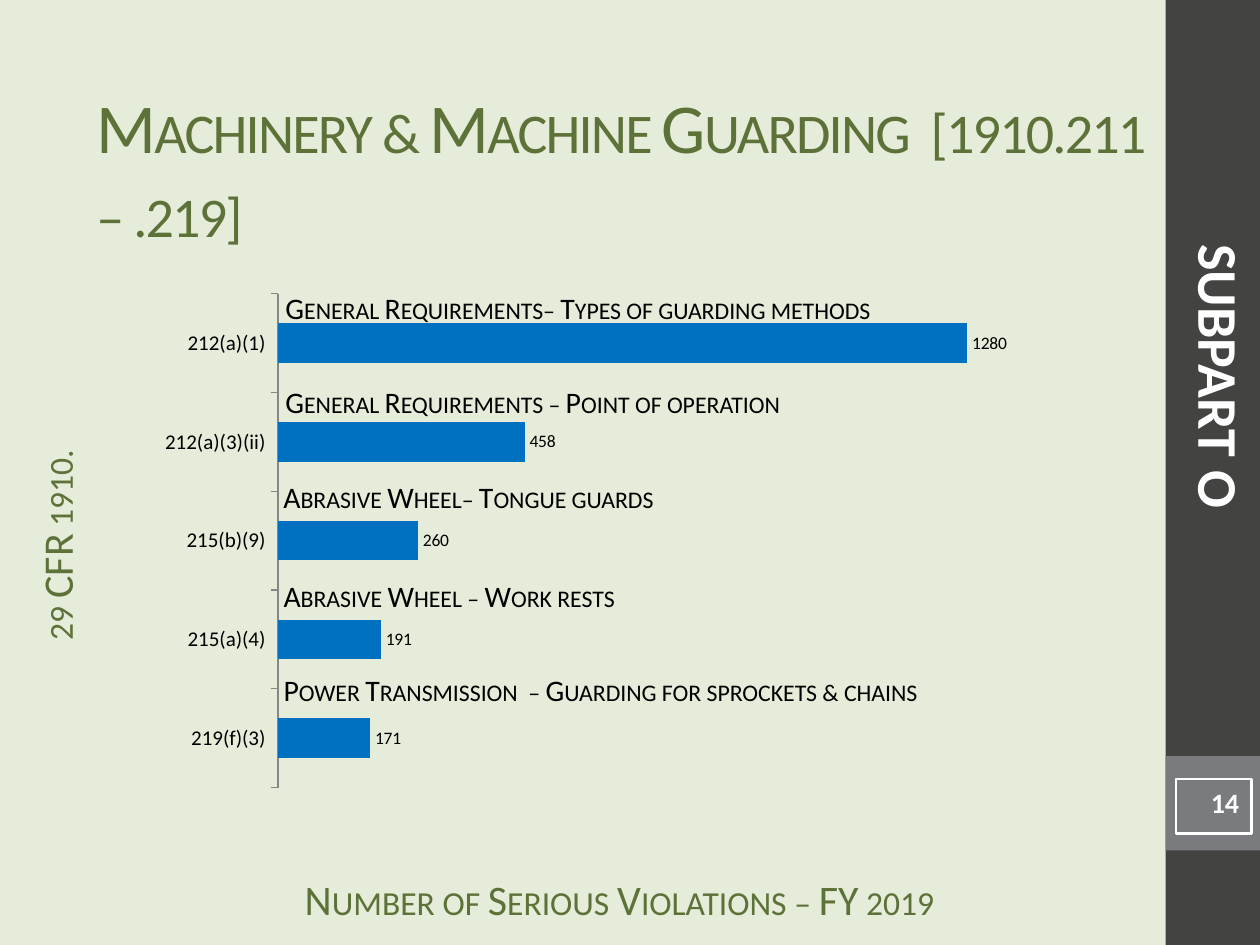
from pptx import Presentation
from pptx.chart.data import CategoryChartData
from pptx.dml.color import RGBColor
from pptx.enum.chart import XL_CHART_TYPE, XL_LABEL_POSITION, XL_TICK_MARK
from pptx.enum.shapes import MSO_SHAPE
from pptx.enum.text import MSO_ANCHOR, MSO_AUTO_SIZE, PP_ALIGN
from pptx.util import Inches, Pt

BAR = XL_CHART_TYPE.BAR_CLUSTERED
OUTSIDE_END = XL_LABEL_POSITION.OUTSIDE_END
TICK_OUT, TICK_NONE = XL_TICK_MARK.OUTSIDE, XL_TICK_MARK.NONE
RECT = MSO_SHAPE.RECTANGLE
TOP, MIDDLE = MSO_ANCHOR.TOP, MSO_ANCHOR.MIDDLE
GROW = MSO_AUTO_SIZE.SHAPE_TO_FIT_TEXT
LEFT, CENTER, RIGHT = PP_ALIGN.LEFT, PP_ALIGN.CENTER, PP_ALIGN.RIGHT

THEME = {
    "font": "Calibri",
    "background": "E5ECD9", "band": "434342", "number_band": "797B7E",
    "heading": "5D7238", "text": "000000", "light": "FFFFFF",
    "bar": "0070C0", "axis": "868686",
    "title_size": 40, "side_size": 32, "label_size": 24, "caption_size": 17,
    "number_size": 16, "category_size": 12, "value_size": 10,
}

prs = Presentation()
prs.slide_width, prs.slide_height = Inches(10), Inches(7.5)
COL, ROW = prs.slide_width / 120, prs.slide_height / 90
s = prs.slides.add_slide(prs.slide_layouts[6])


def color(name):
    return RGBColor.from_string(THEME[name])


def grid(left, top, width, height):
    return round(left * COL), round(top * ROW), round(width * COL), round(height * ROW)


def write(sp, text, size, ink, align=LEFT, caps=False, bold=False, spacing=None, **frame):
    """Fill a shape with one styled line; frame holds text frame settings."""
    tf = sp.text_frame
    for name, value in {"word_wrap": True, "vertical_anchor": TOP, **frame}.items():
        setattr(tf, name, value)
    p = tf.paragraphs[0]
    p.alignment = align
    r = p.add_run()
    r.text = text
    for name, value in {"name": THEME["font"], "size": Pt(THEME[size]), "bold": bold}.items():
        setattr(r.font, name, value)
    r.font.color.rgb = color(ink)
    if caps:
        r._r.get_or_add_rPr().set("cap", "small")
    if spacing is not None:
        r._r.get_or_add_rPr().set("spc", str(spacing))


# Background and right-hand band
s.background.fill.solid()
s.background.fill.fore_color.rgb = color("background")
for top, height, fill in [(0, 90, "band"), (72, 9, "number_band")]:
    sp = s.shapes.add_shape(RECT, *grid(111, top, 9, height))
    sp.shadow.inherit = False
    sp.fill.solid()
    sp.fill.fore_color.rgb = color(fill)
    sp.line.fill.background()

# Axis titles
for box, angle, text in [
    ((25, 83.2, 68, 4), 0, "Number of Serious Violations – FY 2019"),
    ((-18.7, 48.4, 50.3, 7), 270, "29 CFR 1910."),
]:
    sp = s.shapes.add_textbox(*grid(*box))
    sp.rotation = angle
    write(sp, text, "label_size", "heading", CENTER, caps=True, margin_top=0)

# Violations chart
data = CategoryChartData()
data.categories = ["219(f)(3)", "215(a)(4)", "215(b)(9)", "212(a)(3)(ii)", "212(a)(1)"]
data.add_series("Series 1", [171, 191, 260, 458, 1280])
chart = s.shapes.add_chart(BAR, *grid(14, 27, 86, 49), data).chart
chart.has_legend = chart.has_title = False
chart.font.name = THEME["font"]
chart.font.size = Pt(THEME["value_size"])
chart.font.color.rgb = color("text")

axis = chart.category_axis
axis.major_tick_mark, axis.minor_tick_mark = TICK_OUT, TICK_NONE
axis.has_major_gridlines = False
axis.tick_labels.font.size = Pt(THEME["category_size"])
axis.format.line.color.rgb = color("axis")
chart.value_axis.has_major_gridlines = False
chart.value_axis.visible = False

plot = chart.plots[0]
plot.gap_width = 150
plot.vary_by_categories = False
fill = plot.series[0].format.fill
fill.solid()
fill.fore_color.rgb = color("bar")
plot.has_data_labels = True
plot.data_labels.show_value = True
plot.data_labels.position = OUTSIDE_END

# Title
write(s.shapes.add_textbox(*grid(8, 7, 102.7, 18)),
      "Machinery & Machine Guarding  [1910.211 – .219]",
      "title_size", "heading", caps=True, spacing=-100, vertical_anchor=MIDDLE)

# Slide number
sp = s.shapes.add_shape(RECT, *grid(112, 74.2, 7.2, 5.2))
sp.shadow.inherit = False
sp.fill.background()
sp.line.color.rgb = color("light")
sp.line.width = Pt(1.5)
write(sp, "14", "number_size", "light", RIGHT, bold=True)

# Captions above the bars
FITTED = {"word_wrap": False, "auto_size": GROW}
FLUSH = {f"margin_{side}": 0 for side in ("left", "top", "right", "bottom")}
for box, text, frame in [
    ((26, 27, 60.1, 4.7), "General Requirements– Types of guarding methods", FITTED),
    ((26, 36, 51.4, 4.7), "General Requirements – Point of operation", FITTED),
    ((25.8, 45, 40.2, 4.7), "Abrasive Wheel– Tongue guards", FITTED),
    ((27, 55, 55.6, 3.1), "Abrasive Wheel – Work rests", FLUSH),
    ((27, 64, 68, 4), "Power Transmission  – Guarding for sprockets & chains", FLUSH),
]:
    write(s.shapes.add_textbox(*grid(*box)), text, "caption_size", "text", caps=True, **frame)

# Subpart name on the band
sp = s.shapes.add_textbox(*grid(80.3, 32, 71.8, 7.7))
sp.rotation = 90
write(sp, "SUBPART O", "side_size", "light", CENTER, bold=True, auto_size=GROW)

prs.save("out.pptx")
